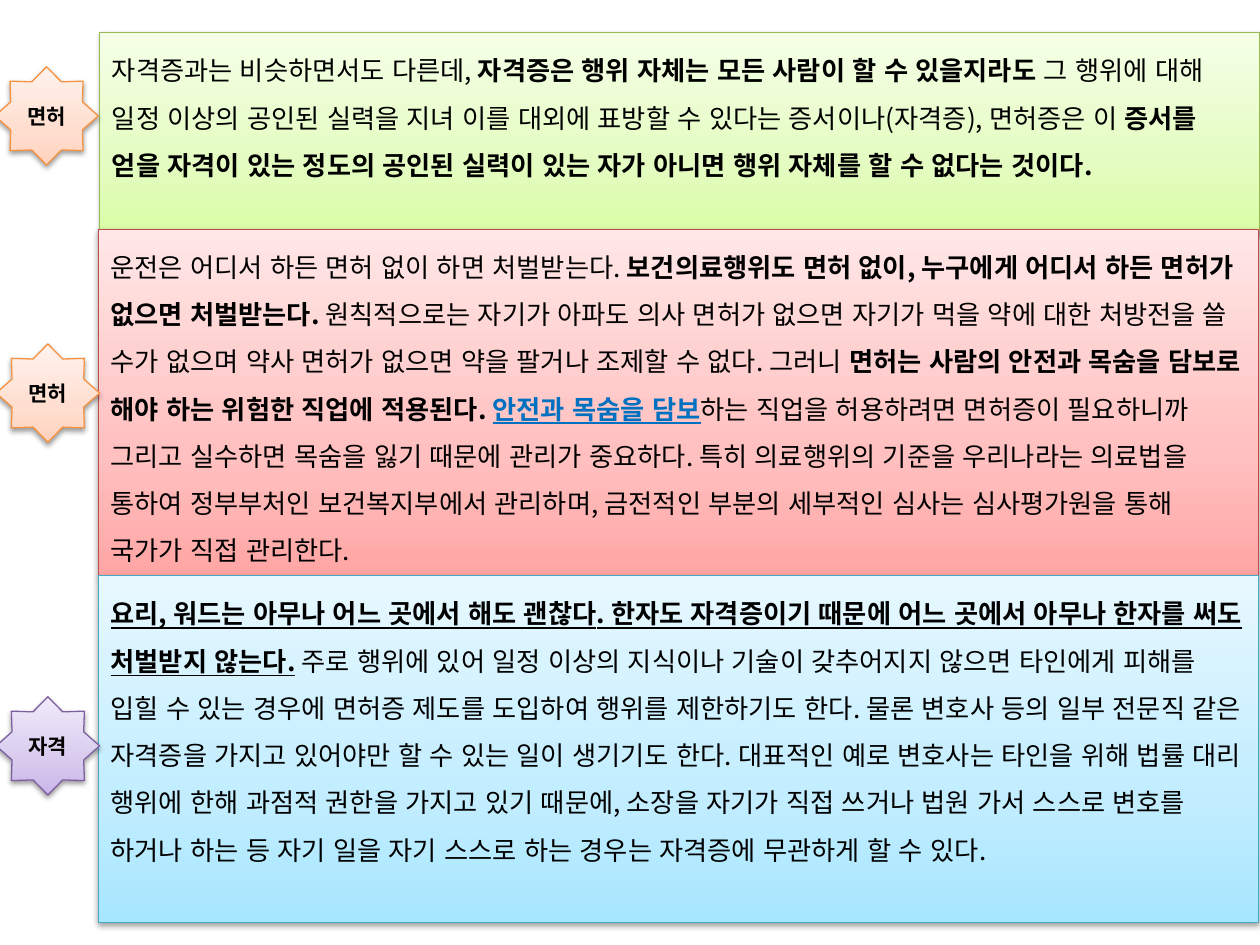
from lxml import etree
from pptx import Presentation
from pptx.dml.color import RGBColor
from pptx.enum.lang import MSO_LANGUAGE_ID
from pptx.enum.shapes import MSO_SHAPE
from pptx.enum.text import MSO_ANCHOR, PP_ALIGN
from pptx.oxml.ns import qn
from pptx.util import Inches, Pt

RECTANGLE, STAR = MSO_SHAPE.RECTANGLE, MSO_SHAPE.STAR_8_POINT
TOP, MIDDLE = MSO_ANCHOR.TOP, MSO_ANCHOR.MIDDLE
LEFT, CENTER = PP_ALIGN.LEFT, PP_ALIGN.CENTER
KOREAN = MSO_LANGUAGE_ID.KOREAN

FONT = "Noto Sans CJK KR"
COLORS = {"text": "000000", "highlight": "0070C0", "shadow": "000000"}
# Each theme: outline, then gradient from bottom to top
THEMES = {
    "green": ("98B955", "DAFDA7", "E4FCC2", "F5FFE7"),
    "red": ("BF4C48", "FFA6A5", "FFC0BF", "FFE7E7"),
    "blue": ("46AAC5", "A7E6FF", "C1EDFF", "E7F8FF"),
    "orange": ("F69240", "FFD2BD", "FFDED0", "FFF2ED"),
    "purple": ("7D60A0", "C9B5E8", "D8CBEE", "F0EAF9"),
}
GRADIENT_STOPS = (0, 35, 100)

BOLD = {"bold": True}
UNDERLINED = {"bold": True, "underline": True}
HIGHLIGHT = {**UNDERLINED, "color": "highlight"}

# Theme, box, passages with their emphasis
PANELS = [
    ("green", (0.79, 0.26, 9.21, 1.57), [
        ("자격증과는 비슷하면서도 다른데, ", {}),
        ("자격증은 행위 자체는 모든 사람이 할 수 있을지라도 ", BOLD),
        ("그 행위에 대해 일정 이상의 공인된 실력을 지녀 이를 대외에 표방할 수 있다는 "
         "증서이나(자격증), 면허증은 이 ", {}),
        ("증서를 얻을 자격이 있는 정도의 공인된 실력이 있는 자가 아니면 "
         "행위 자체를 할 수 없다는 것이다.", BOLD),
    ]),
    ("red", (0.78, 1.82, 9.21, 2.75), [
        ("운전은 어디서 하든 면허 없이 하면 처벌받는다. ", {}),
        ("보건의료행위도 면허 없이, 누구에게 어디서 하든 면허가 없으면 처벌받는다. ", BOLD),
        ("원칙적으로는 자기가 아파도 의사 면허가 없으면 자기가 먹을 약에 대한 처방전을 "
         "쓸 수가 없으며 약사 면허가 없으면 약을 팔거나 조제할 수 없다. 그러니 ", {}),
        ("면허는 사람의 안전과 목숨을 담보로 해야 하는 위험한 직업에 적용된다. ", BOLD),
        ("안전과 목숨을 담보", HIGHLIGHT),
        ("하는 직업을 허용하려면 면허증이 필요하니까 그리고 실수하면 목숨을 잃기 때문에 "
         "관리가 중요하다. 특히 의료행위의 기준을 우리나라는 의료법을 통하여 정부부처인 "
         "보건복지부에서 관리하며, 금전적인 부분의 세부적인 심사는 심사평가원을 통해 "
         "국가가 직접 관리한다.", {}),
    ]),
    ("blue", (0.78, 4.57, 9.21, 2.75), [
        ("요리, 워드는 아무나 어느 곳에서 해도 괜찮다. 한자도 자격증이기 때문에 "
         "어느 곳에서 아무나 한자를 써도 처벌받지 않는다.", UNDERLINED),
        (" ", BOLD),
        ("주로 행위에 있어 일정 이상의 지식이나 기술이 갖추어지지 않으면 타인에게 피해를 "
         "입힐 수 있는 경우에 면허증 제도를 도입하여 행위를 제한하기도 한다. 물론 변호사 "
         "등의 일부 전문직 같은 자격증을 가지고 있어야만 할 수 있는 일이 생기기도 한다. "
         "대표적인 예로 변호사는 타인을 위해 법률 대리 행위에 한해 과점적 권한을 가지고 "
         "있기 때문에, 소장을 자기가 직접 쓰거나 법원 가서 스스로 변호를 하거나 하는 등 "
         "자기 일을 자기 스스로 하는 경우는 자격증에 무관하게 할 수 있다.", {}),
    ]),
]
BADGES = [
    ("orange", (-0.04, 0.53, 0.82, 0.78), "면허"),
    ("orange", (-0.03, 2.73, 0.82, 0.78), "면허"),
    ("purple", (-0.03, 5.53, 0.82, 0.78), "자격"),
]


def add_color(parent, color, **modifiers):
    node = etree.SubElement(parent, qn("a:srgbClr"), val=color)
    for tag, value in modifiers.items():
        etree.SubElement(node, qn(f"a:{tag}"), val=str(value))


def add_themed_shape(shapes, kind, box, theme):
    """Add a shape with a vertical gradient, thin outline and soft shadow."""
    shape = shapes.add_shape(kind, *map(Inches, box))
    outline, *gradient_colors = THEMES[theme]
    properties = shape.element.spPr

    gradient = etree.Element(qn("a:gradFill"), rotWithShape="1")
    stops = etree.SubElement(gradient, qn("a:gsLst"))
    for position, color in zip(GRADIENT_STOPS, gradient_colors):
        add_color(etree.SubElement(stops, qn("a:gs"), pos=str(position * 1000)), color)
    etree.SubElement(gradient, qn("a:lin"), ang=str(270 * 60000), scaled="1")
    properties.find(qn("a:prstGeom")).addnext(gradient)

    shape.line.color.rgb = RGBColor.from_string(outline)
    shape.line.width = Pt(0.75)

    shape.shadow.inherit = False
    shadow = etree.SubElement(
        properties.find(qn("a:effectLst")), qn("a:outerShdw"),
        blurRad=str(Pt(3.1)), dist=str(Pt(1.6)), dir=str(90 * 60000), rotWithShape="0")
    add_color(shadow, COLORS["shadow"], alpha=38000)
    return shape


def add_run(paragraph, text, size, bold=False, underline=False, color="text"):
    run = paragraph.add_run()
    run.text = text
    font = run.font
    font.name, font.size, font.language_id = FONT, Pt(size), KOREAN
    font.bold, font.underline = bold, underline
    font.color.rgb = RGBColor.from_string(COLORS[color])


def write_text(shape, passages, size, align, anchor, line_spacing=1.0):
    frame = shape.text_frame
    frame.word_wrap = True
    frame.vertical_anchor = anchor
    paragraph = frame.paragraphs[0]
    paragraph.alignment = align
    paragraph.line_spacing = line_spacing
    for text, emphasis in passages:
        add_run(paragraph, text, size, **emphasis)


def add_panel(shapes, theme, box, passages):
    panel = add_themed_shape(shapes, RECTANGLE, box, theme)
    write_text(panel, passages, size=15, align=LEFT, anchor=TOP, line_spacing=1.5)


def add_badge(shapes, theme, box, label):
    badge = add_themed_shape(shapes, STAR, box, theme)
    write_text(badge, [(label, BOLD)], size=12, align=CENTER, anchor=MIDDLE)


def main():
    presentation = Presentation()
    presentation.slide_width, presentation.slide_height = Inches(10), Inches(7.5)
    slide = presentation.slides.add_slide(presentation.slide_layouts[6])
    panel_group = slide.shapes.add_group_shape()
    for panel in PANELS:
        add_panel(panel_group.shapes, *panel)
    for badge in BADGES:
        add_badge(slide.shapes, *badge)
    presentation.save("out.pptx")


if __name__ == "__main__":
    main()
